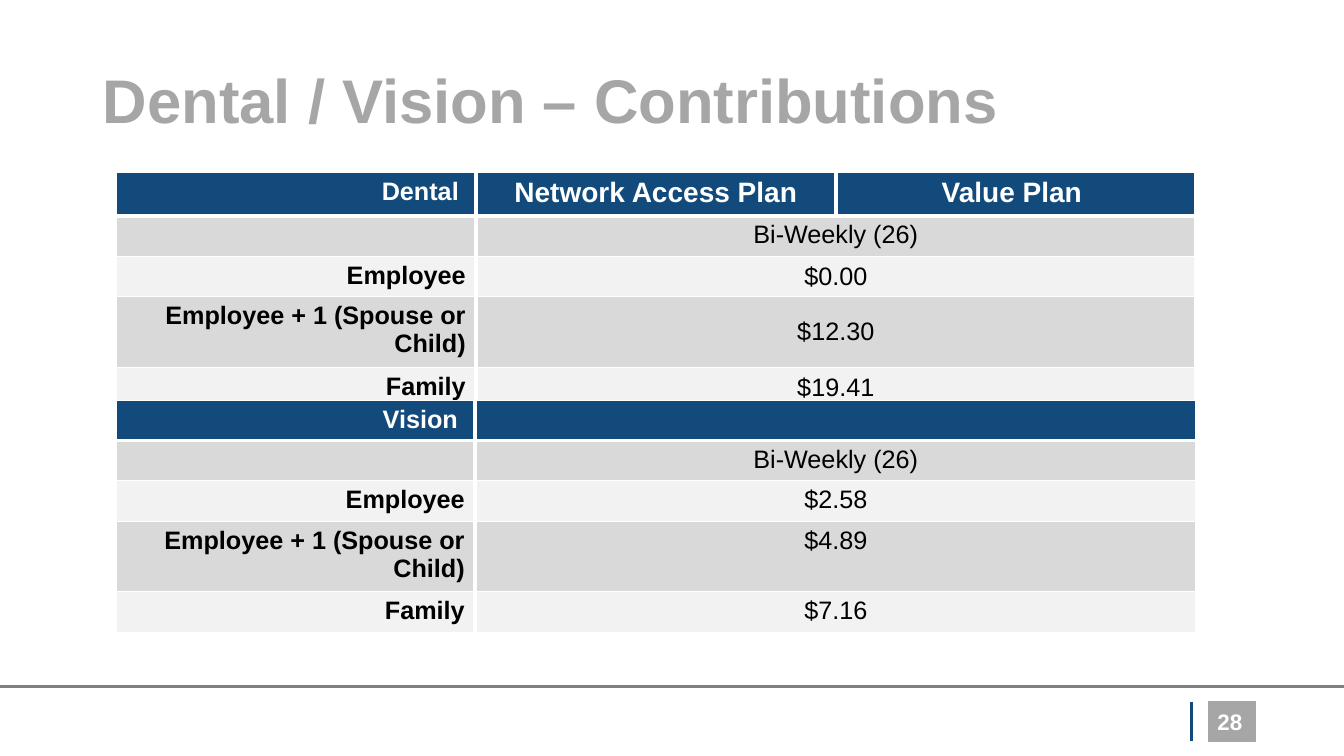
from lxml import etree
from pptx import Presentation
from pptx.dml.color import RGBColor
from pptx.enum.shapes import MSO_CONNECTOR, MSO_SHAPE
from pptx.enum.text import MSO_ANCHOR, PP_ALIGN
from pptx.oxml.ns import qn
from pptx.util import Inches, Pt

LEFT, CENTER, RIGHT = PP_ALIGN.LEFT, PP_ALIGN.CENTER, PP_ALIGN.RIGHT
TOP, MIDDLE = MSO_ANCHOR.TOP, MSO_ANCHOR.MIDDLE
STRAIGHT, RECTANGLE = MSO_CONNECTOR.STRAIGHT, MSO_SHAPE.RECTANGLE

THEME = {
    "font": "Arial",
    "navy": "124A7B", "gray": "A6A6A6", "rule": "808080",
    "band_dark": "D9D9D9", "band_light": "F2F2F2",
    "white": "FFFFFF", "black": "000000",
    "title": 44, "plan": 20, "body": 18, "number": 16,
}


def format_text(text_frame, size, color, bold, alignment):
    paragraph = text_frame.paragraphs[0]
    paragraph.alignment = alignment
    for run in paragraph.runs:
        run.font.name = THEME["font"]
        run.font.size = Pt(THEME[size])
        run.font.bold = bold
        run.font.color.rgb = RGBColor.from_string(THEME[color])


def set_borders(cell, widths):
    properties = cell._tc.get_or_add_tcPr()
    for side, width in zip("LRTB", widths):
        line = etree.SubElement(properties, qn(f"a:ln{side}"), w=str(Pt(width)))
        fill = etree.SubElement(line, qn("a:solidFill"))
        etree.SubElement(fill, qn("a:srgbClr"), val=THEME["white"])


presentation = Presentation()
presentation.slide_width = Inches(13.33)
presentation.slide_height = Inches(7.5)
slide = presentation.slides.add_slide(presentation.slide_layouts[5])

title = slide.shapes.title
title.left, title.top = Inches(0.92), Inches(0.3)
title.width, title.height = Inches(11.5), Inches(1.45)
title.text_frame.text = "Dental / Vision – Contributions"
title.text_frame.vertical_anchor = MIDDLE
title.text_frame.paragraphs[0].line_spacing = 0.9
format_text(title.text_frame, "title", "gray", True, LEFT)

number_box = slide.shapes.add_shape(
    RECTANGLE, Inches(11.99), Inches(6.96), Inches(0.46), Inches(0.4))
number_box.shadow.inherit = False
number_box.fill.solid()
number_box.fill.fore_color.rgb = RGBColor.from_string(THEME["gray"])
number_box.line.color.rgb = RGBColor.from_string(THEME["gray"])
number_box.line.width = Pt(1)

for x1, y1, x2, y2, color, width in [
    (11.82, 6.96, 11.82, 7.35, "navy", 2),
    (0, 6.81, 13.33, 6.81, "rule", 2.25),
]:
    footer_line = slide.shapes.add_connector(
        STRAIGHT, Inches(x1), Inches(y1), Inches(x2), Inches(y2))
    footer_line.line.color.rgb = RGBColor.from_string(THEME[color])
    footer_line.line.width = Pt(width)
    etree.SubElement(footer_line._element.spPr, qn("a:effectLst"))

page_number = slide.shapes.add_textbox(
    Inches(9.42), Inches(6.96), Inches(3), Inches(0.4))
page_number.text_frame.word_wrap = True
page_number.text_frame.vertical_anchor = MIDDLE
page_number.text_frame.text = "28"
format_text(page_number.text_frame, "number", "white", True, RIGHT)

labels = ["", "Employee", "Employee + 1 (Spouse or Child)", "Family"]
plans = [
    (1.71, [3.57, 3.57, 3.57], 0.41, MIDDLE,
     ["Dental ", "Network Access Plan", "Value Plan "],
     ["Bi-Weekly (26)", "$0.00", "$12.30", "$19.41"]),
    (3.97, [3.56, 7.16], 0.38, TOP,
     ["Vision ", ""],
     ["Bi-Weekly (26)", "$2.58", "$4.89", "$7.16"]),
]

for top, column_widths, header_height, value_anchor, headers, values in plans:
    row_heights = [header_height, 0.38, 0.39, 0.66, 0.38]
    table = slide.shapes.add_table(
        len(row_heights), len(column_widths), Inches(1.15), Inches(top),
        Inches(sum(column_widths)), Inches(sum(row_heights))).table
    for column, width in zip(table.columns, column_widths):
        column.width = Inches(width)
    for row, height in zip(table.rows, row_heights):
        row.height = Inches(height)

    last_column = len(column_widths) - 1
    rows = [headers] + [[label, value] for label, value in zip(labels, values)]
    for row_index, texts in enumerate(rows):
        is_header = row_index == 0
        if is_header:
            fill = "navy"
        else:
            fill = "band_dark" if row_index % 2 else "band_light"
        for column_index in range(last_column + 1):
            cell = table.cell(row_index, column_index)
            is_label = column_index == 0
            set_borders(cell, [1 if is_label else 3, 3,
                               3 if row_index == 1 else 1,
                               3 if is_header else 1])
            cell.fill.solid()
            cell.fill.fore_color.rgb = RGBColor.from_string(THEME[fill])
            if column_index < len(texts):
                cell.text_frame.text = texts[column_index]
                cell.vertical_anchor = (
                    value_anchor if row_index > 1 and not is_label else TOP)
                format_text(cell.text_frame,
                            "plan" if is_header and not is_label else "body",
                            "white" if is_header else "black",
                            is_header or is_label,
                            RIGHT if is_label else CENTER)
        if not is_header and last_column > 1:
            table.cell(row_index, 1).merge(table.cell(row_index, last_column))

presentation.save("out.pptx")
